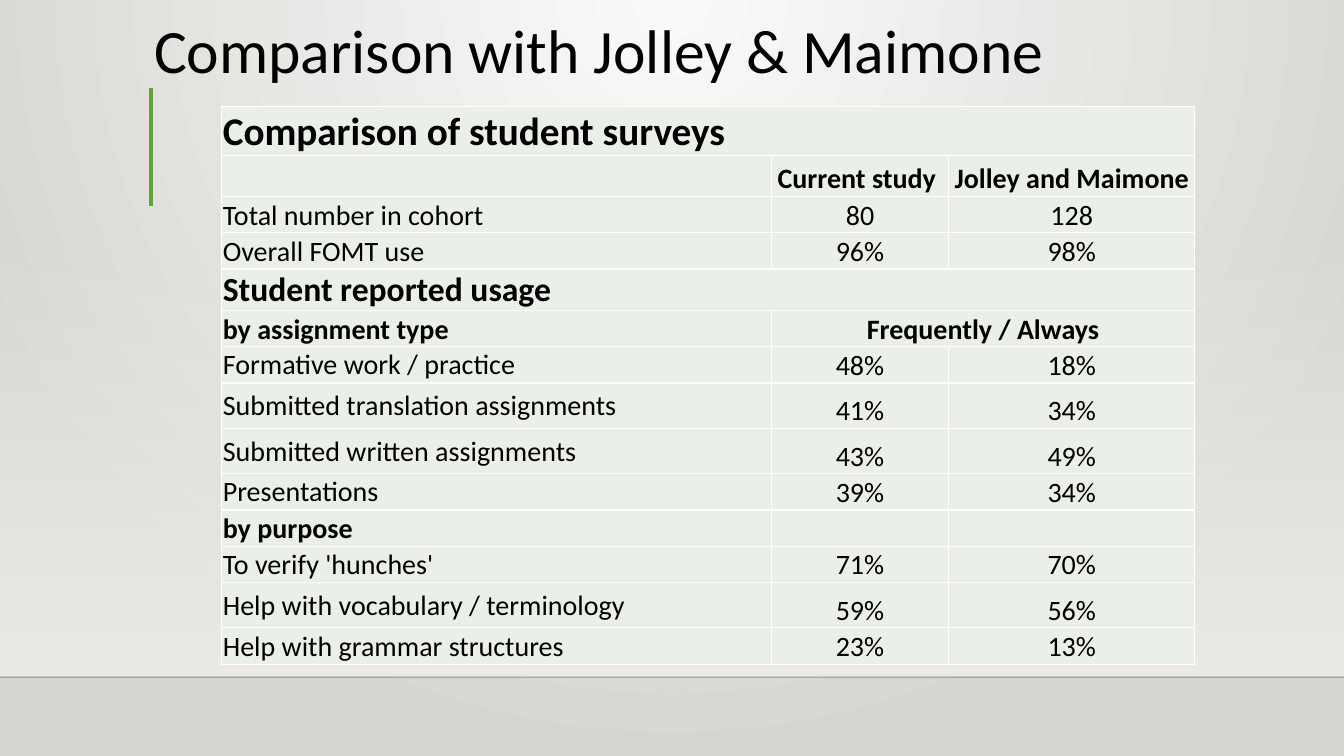
from dataclasses import dataclass

from lxml import etree
from pptx import Presentation
from pptx.dml.color import RGBColor
from pptx.enum.shapes import MSO_CONNECTOR, MSO_SHAPE
from pptx.enum.text import MSO_ANCHOR, PP_ALIGN
from pptx.oxml import parse_xml
from pptx.oxml.ns import nsdecls, qn
from pptx.util import Inches, Pt

BLACK = RGBColor(0x00, 0x00, 0x00)
FLOOR_EDGE = RGBColor(0x00, 0x00, 0x01)
GREEN = RGBColor(0x5F, 0xA5, 0x34)
WHITE = RGBColor(0xFF, 0xFF, 0xFF)
CELL_GREEN = RGBColor(0xEA, 0xF0, 0xE8)
CENTER_LIGHT = RGBColor(0xFA, 0xFA, 0xF9)
OUTER_GREY = RGBColor(0xD7, 0xD5, 0xD2)
WALL = RGBColor(0xED, 0xEB, 0xE7)
FONT = "Calibri"
COLUMN_WIDTHS = (5.45, 1.76, 2.44)
RADIAL = '<a:path path="circle"><a:fillToRect l="43000" t="0" r="43000" b="100000"/></a:path>'
DOWNWARD = '<a:lin ang="5400000" scaled="0"/>'


@dataclass(frozen=True)
class SurveyRow:
    label: str
    values: tuple[str, ...]
    height: float = 0.36
    size: int = 20
    bold: bool = False
    label_anchor: MSO_ANCHOR = MSO_ANCHOR.MIDDLE


@dataclass(frozen=True)
class Rule:
    start: tuple[float, float]
    end: tuple[float, float]
    color: RGBColor
    width: float
    opacity: int = 100


BOTTOM = MSO_ANCHOR.BOTTOM
ROWS = (
    SurveyRow("Comparison of student surveys", (), 0.48, 28, True, BOTTOM),
    SurveyRow("", ("Current study ", "Jolley and Maimone"), 0.41, bold=True),
    SurveyRow("Total number in cohort", ("80", "128"), label_anchor=BOTTOM),
    SurveyRow("Overall FOMT use", ("96%", "98%"), label_anchor=BOTTOM),
    SurveyRow("Student reported usage", (), 0.41, 24, True, BOTTOM),
    SurveyRow("by assignment type", ("Frequently / Always",), bold=True, label_anchor=BOTTOM),
    SurveyRow("Formative work / practice", ("48%", "18%")),
    SurveyRow("Submitted translation assignments", ("41%", "34%"), 0.45),
    SurveyRow("Submitted written assignments", ("43%", "49%"), 0.45),
    SurveyRow("Presentations", ("39%", "34%")),
    SurveyRow("by purpose", ("", ""), bold=True),
    SurveyRow("To verify 'hunches'", ("71%", "70%")),
    SurveyRow("Help with vocabulary / terminology", ("59%", "56%"), 0.45),
    SurveyRow("Help with grammar structures", ("23%", "13%")),
)
RULES = (
    Rule((0, 6.72), (13.33, 6.72), FLOOR_EDGE, 1, 20),
    Rule((1.5, 0.87), (1.5, 2.04), GREEN, 3),
)


def set_gradient(element, first: RGBColor, last: RGBColor, direction: str, first_opacity: int = 100) -> None:
    solid = next(element.iter(qn("a:solidFill")))
    gradient = parse_xml(
        f'<a:gradFill {nsdecls("a")} rotWithShape="1"><a:gsLst>'
        f'<a:gs pos="0"><a:srgbClr val="{first}"><a:alpha val="{first_opacity * 1000}"/></a:srgbClr></a:gs>'
        f'<a:gs pos="100000"><a:srgbClr val="{last}"/></a:gs>'
        f"</a:gsLst>{direction}</a:gradFill>"
    )
    solid.getparent().replace(solid, gradient)


def add_backdrop(slide) -> None:
    slide.background.fill.solid()
    set_gradient(slide.element, CENTER_LIGHT, OUTER_GREY, RADIAL)
    wall = slide.shapes.add_shape(MSO_SHAPE.RECTANGLE, 0, Inches(2.2), Inches(13.33), Inches(4.5))
    wall.shadow.inherit = False
    wall.line.fill.background()
    wall.fill.solid()
    wall.fill.fore_color.rgb = WALL
    set_gradient(wall.element, WALL, WALL, DOWNWARD, 0)


def add_rule(slide, rule: Rule) -> None:
    connector = slide.shapes.add_connector(
        MSO_CONNECTOR.STRAIGHT, *(Inches(value) for value in rule.start + rule.end)
    )
    connector.line.color.rgb = rule.color
    connector.line.width = Pt(rule.width)
    if rule.opacity < 100:
        color = next(connector.element.iter(qn("a:srgbClr")))
        etree.SubElement(color, qn("a:alpha"), val=str(rule.opacity * 1000))
    etree.SubElement(connector.element.spPr, qn("a:effectLst"))


def format_runs(paragraph, size: int, bold: bool = False) -> None:
    for run in paragraph.runs:
        run.font.name = FONT
        run.font.size = Pt(size)
        run.font.bold = bold
        run.font.color.rgb = BLACK


def add_title(slide) -> None:
    title = slide.shapes.add_textbox(Inches(1.43), Inches(-0.24), Inches(10.41), Inches(1.15))
    title.text_frame.text = "Comparison with Jolley & Maimone"
    title.text_frame.word_wrap = True
    title.text_frame.vertical_anchor = BOTTOM
    paragraph = title.text_frame.paragraphs[0]
    paragraph.line_spacing = 0.9
    format_runs(paragraph, 44)


def style_cell(cell) -> None:
    cell.margin_left = cell.margin_right = cell.margin_top = Inches(0.01)
    cell.margin_bottom = 0
    cell.fill.solid()
    cell.fill.fore_color.rgb = CELL_GREEN
    properties = cell._tc.get_or_add_tcPr()
    for index, side in enumerate(("lnL", "lnR", "lnT", "lnB")):
        border = parse_xml(
            f'<a:{side} {nsdecls("a")} w="{Pt(1)}"><a:solidFill>'
            f'<a:srgbClr val="{WHITE}"/></a:solidFill></a:{side}>'
        )
        properties.insert(index, border)


def write_cell(cell, text: str, row: SurveyRow, alignment: PP_ALIGN, anchor: MSO_ANCHOR) -> None:
    cell.vertical_anchor = anchor
    cell.text_frame.text = text
    paragraph = cell.text_frame.paragraphs[0]
    paragraph.alignment = alignment
    format_runs(paragraph, row.size, row.bold)


def add_survey_table(slide) -> None:
    frame = slide.shapes.add_table(
        len(ROWS), len(COLUMN_WIDTHS), Inches(2.2), Inches(1.06), Inches(9.64), Inches(5.53)
    )
    table = frame.table
    table.first_row = False
    table.horz_banding = False
    for column, width in zip(table.columns, COLUMN_WIDTHS):
        column.width = Inches(width)
    for index, row in enumerate(ROWS):
        table.rows[index].height = Inches(row.height)
        cells = [table.cell(index, column) for column in range(len(COLUMN_WIDTHS))]
        for cell in cells:
            style_cell(cell)
        write_cell(cells[0], row.label, row, PP_ALIGN.LEFT, row.label_anchor)
        for cell, value in zip(cells[1:], row.values):
            write_cell(cell, value, row, PP_ALIGN.CENTER, BOTTOM)
        if len(row.values) < 2:
            cells[len(row.values)].merge(cells[-1])


def main() -> None:
    presentation = Presentation()
    presentation.slide_width = Inches(13.33)
    presentation.slide_height = Inches(7.5)
    slide = presentation.slides.add_slide(presentation.slide_layouts[6])
    add_backdrop(slide)
    for rule in RULES:
        add_rule(slide, rule)
    add_title(slide)
    add_survey_table(slide)
    presentation.save("out.pptx")


if __name__ == "__main__":
    main()
